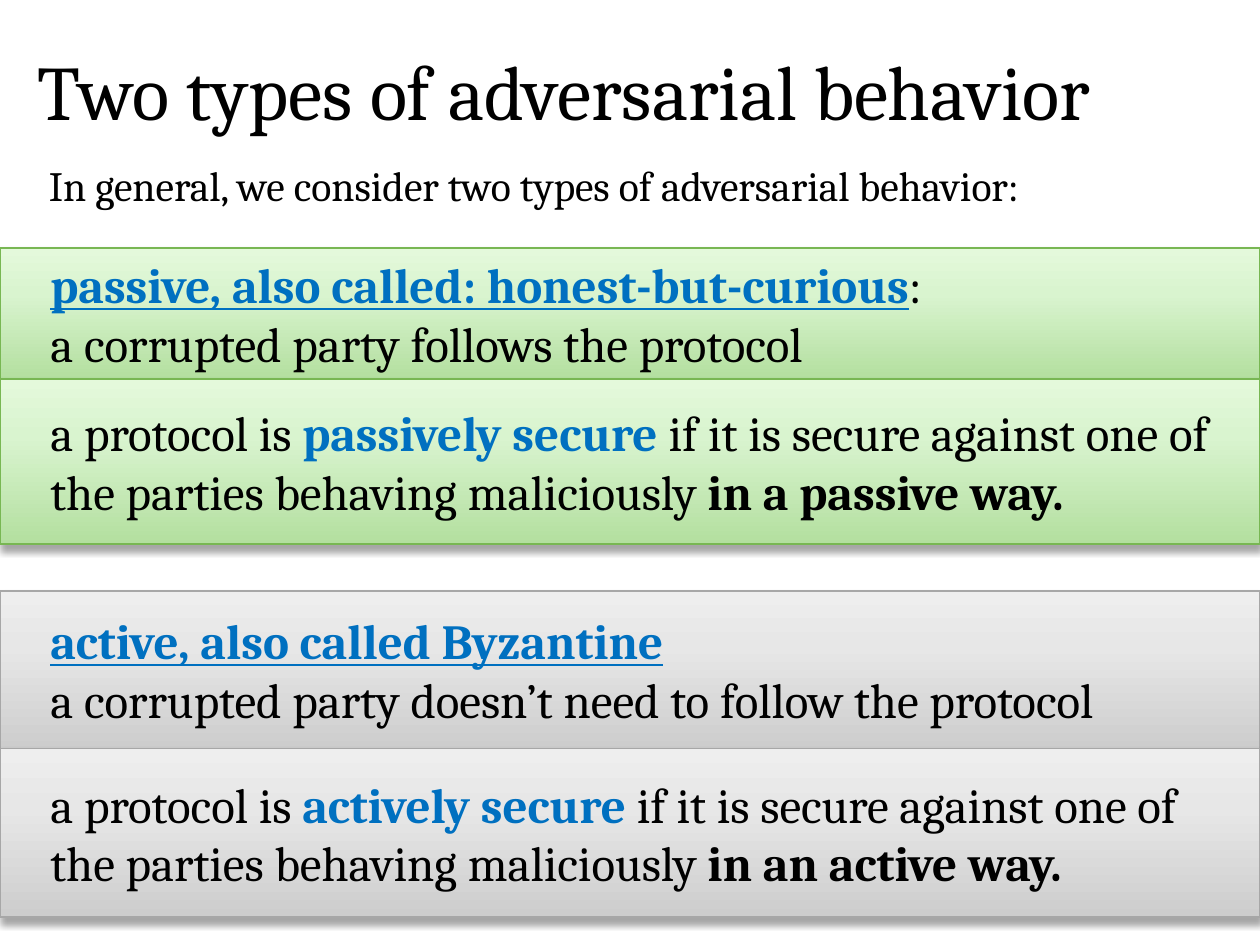
from pptx import Presentation
from pptx.dml.color import RGBColor
from pptx.enum.shapes import MSO_SHAPE
from pptx.enum.text import MSO_ANCHOR, MSO_AUTO_SIZE, PP_ALIGN
from pptx.oxml import parse_xml
from pptx.oxml.ns import nsdecls, qn
from pptx.util import Inches, Pt

RECT = MSO_SHAPE.RECTANGLE
MIDDLE, LEFT = MSO_ANCHOR.MIDDLE, PP_ALIGN.LEFT
NO_FIT = MSO_AUTO_SIZE.NONE

THEME = {
    "font": "Cambria",
    "title": 44, "intro": 23.8, "band": 28,
    "text": "000000", "accent": "0070C0",
    "green": {"stops": [(0, "B3DF9F"), (65, "D9F4CF"), (100, "E4F9DB")], "line": "78B753"},
    "gray": {"stops": [(0, "CDCDCD"), (65, "E7E7E7"), (100, "EEEEEE")], "line": "A7A7A7"},
}

# Content: each run is (text, style); styles are "", "term", "key" or "bold"
TITLE = "Two types of adversarial behavior"
INTRO = "In general, we consider two types of adversarial behavior:"


def definition(adverb, ending):
    return [[("a protocol is ", ""), (f"{adverb} secure ", "key"),
             ("if it is secure against one of the parties behaving maliciously ", ""),
             (ending, "bold")]]


# Each group: palette, top, (heading height, definition height), (heading, definition)
GROUPS = [
    ("green", 1.97, (1.04, 1.31), (
        [[("passive, also called: honest-but-curious", "term"), (":", "")],
         [("a corrupted party follows the protocol", "")]],
        definition("passively", "in a passive way."))),
    ("gray", 4.69, (1.25, 1.34), (
        [[("active, also called Byzantine", "term")],
         [("a corrupted party doesn’t need to follow the protocol", "")]],
        definition("actively", "in an active way."))),
]


def style_paragraph(p, size, spacing=None):
    p.alignment = LEFT
    p.font.name, p.font.size = THEME["font"], Pt(size)
    if spacing:
        p.line_spacing = spacing


def add_run(p, text, style=""):
    r = p.add_run()
    r.text = text
    color = THEME["accent"] if style in ("term", "key") else THEME["text"]
    r.font.color.rgb = RGBColor.from_string(color)
    if style:
        r.font.bold = True
    if style == "term":
        r.font.underline = True


def add_band(slide, palette, top, height, paragraphs):
    sp = slide.shapes.add_shape(RECT, 0, Inches(top), prs.slide_width, Inches(height))
    sp.line.color.rgb = RGBColor.from_string(palette["line"])
    sp.line.width = Pt(1)

    # Three-stop vertical gradient and soft shadow below
    stops = "".join(f'<a:gs pos="{pos * 1000}"><a:srgbClr val="{color}"/></a:gs>'
                    for pos, color in palette["stops"])
    sp_pr = sp._element.spPr
    sp_pr.find(qn("a:prstGeom")).addnext(parse_xml(
        f'<a:gradFill {nsdecls("a")} rotWithShape="1"><a:gsLst>{stops}</a:gsLst>'
        '<a:lin ang="16200000" scaled="0"/></a:gradFill>'))
    sp.shadow.inherit = False
    sp_pr.find(qn("a:effectLst")).append(parse_xml(
        f'<a:outerShdw {nsdecls("a")} blurRad="{Pt(4)}" dist="{Pt(3)}" dir="5400000" '
        'rotWithShape="0"><a:srgbClr val="000000"><a:alpha val="35000"/></a:srgbClr>'
        '</a:outerShdw>'))

    tf = sp.text_frame
    tf.word_wrap, tf.vertical_anchor = True, MIDDLE
    tf.margin_left = Inches(0.4)
    for i, runs in enumerate(paragraphs):
        p = tf.add_paragraph() if i else tf.paragraphs[0]
        style_paragraph(p, THEME["band"])
        for text, style in runs:
            add_run(p, text, style)


prs = Presentation()
prs.slide_width, prs.slide_height = Inches(10), Inches(7.5)
slide = prs.slides.add_slide(prs.slide_layouts[5])

# Title
title = slide.shapes.title
title.left, title.top, title.width, title.height = map(Inches, (0.2, 0.03, 9.7, 1.45))
tf = title.text_frame
tf.vertical_anchor, tf.auto_size = MIDDLE, NO_FIT
style_paragraph(tf.paragraphs[0], THEME["title"], 0.9)
add_run(tf.paragraphs[0], TITLE)

# Introduction
intro = slide.shapes.add_textbox(*map(Inches, (0.29, 1.3, 9, 0.55)))
tf = intro.text_frame
tf.word_wrap = True
style_paragraph(tf.paragraphs[0], THEME["intro"], 0.8)
tf.paragraphs[0].space_before = Pt(10)
add_run(tf.paragraphs[0], INTRO)

# Stacked bands, each definition directly under its heading
for palette, top, heights, texts in GROUPS:
    for height, paragraphs in zip(heights, texts):
        add_band(slide, THEME[palette], top, height, paragraphs)
        top += height

prs.save("out.pptx")
